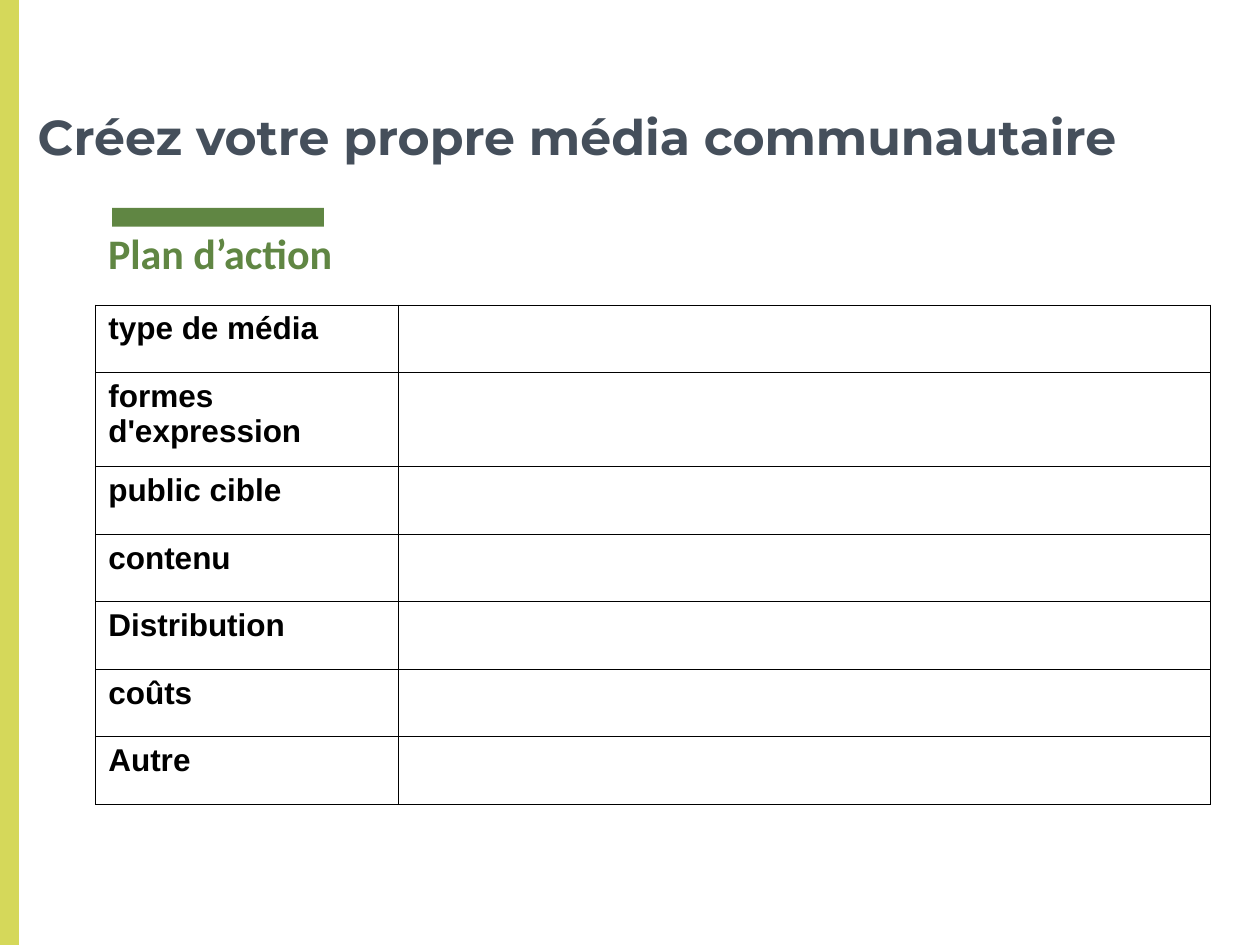
from dataclasses import dataclass

from lxml import etree
from pptx import Presentation
from pptx.dml.color import RGBColor
from pptx.enum.shapes import MSO_SHAPE
from pptx.enum.text import MSO_ANCHOR
from pptx.oxml.ns import qn
from pptx.util import Cm, Pt

RECT = MSO_SHAPE.RECTANGLE
TOP, BOTTOM = MSO_ANCHOR.TOP, MSO_ANCHOR.BOTTOM

COLORS = {
    "lime": "D5D85A",
    "green": "608643",
    "slate": "454F5B",
    "black": "000000",
}


@dataclass(frozen=True)
class Box:
    left: float
    top: float
    width: float
    height: float

    def lengths(self) -> tuple:
        return Cm(self.left), Cm(self.top), Cm(self.width), Cm(self.height)


@dataclass(frozen=True)
class Bar:
    box: Box
    color: str


@dataclass(frozen=True)
class PlanRow:
    label: str
    height: float = 1.36


BARS = [
    Bar(Box(2.26, 4.19, 4.27, 0.38), "green"),
    Bar(Box(0, 0, 0.38, 19.05), "lime"),
]
TITLE_BOX = Box(0.51, 0, 22.99, 3.58)
SUBTITLE_BOX = Box(1.93, 4.34, 21.56, 12.75)

PLAN_ROWS = [
    PlanRow("type de média"),
    PlanRow("formes d'expression", 1.9),
    PlanRow("public cible"),
    PlanRow("contenu"),
    PlanRow("Distribution"),
    PlanRow("coûts"),
    PlanRow("Autre"),
]
COLUMN_WIDTHS = [6.1, 16.38]
TABLE_BOX = Box(1.93, 6.15, sum(COLUMN_WIDTHS), sum(row.height for row in PLAN_ROWS))


def write(tf, text: str, *, size: float, font: str, color: str, bold: bool = True) -> None:
    r = tf.paragraphs[0].add_run()
    r.text = text
    r.font.size = Pt(size)
    r.font.name = font
    r.font.bold = bold
    r.font.color.rgb = RGBColor.from_string(COLORS[color])


def add_bar(s, bar: Bar) -> None:
    sp = s.shapes.add_shape(RECT, *bar.box.lengths())
    sp.shadow.inherit = False
    sp.fill.solid()
    sp.fill.fore_color.rgb = RGBColor.from_string(COLORS[bar.color])
    sp.line.fill.background()


def add_text(s, box: Box, text: str, *, anchor=TOP, **fmt) -> None:
    tf = s.shapes.add_textbox(*box.lengths()).text_frame
    tf.word_wrap = True
    tf.vertical_anchor = anchor
    tf.margin_left = tf.margin_right = tf.margin_top = tf.margin_bottom = Cm(0.25)
    write(tf, text, **fmt)


def set_borders(cell, color: str, width: float) -> None:
    """Draw all four edges; they must precede the fill in the cell's XML."""
    tc_pr = cell._tc.get_or_add_tcPr()
    for i, edge in enumerate(("a:lnL", "a:lnR", "a:lnT", "a:lnB")):
        ln = etree.Element(qn(edge), w=str(Pt(width)))
        fill = etree.SubElement(ln, qn("a:solidFill"))
        etree.SubElement(fill, qn("a:srgbClr"), val=COLORS[color])
        tc_pr.insert(i, ln)


def add_plan_table(s) -> None:
    shape = s.shapes.add_table(len(PLAN_ROWS), len(COLUMN_WIDTHS), *TABLE_BOX.lengths())
    table = shape.table
    table.first_row = table.horz_banding = False
    for column, width in zip(table.columns, COLUMN_WIDTHS):
        column.width = Cm(width)
    for i, row in enumerate(PLAN_ROWS):
        table.rows[i].height = Cm(row.height)
        write(table.cell(i, 0).text_frame, row.label, size=18, font="Arial", color="black")
    for cell in table.iter_cells():
        cell.fill.background()
        set_borders(cell, "black", 0.75)


def main() -> None:
    prs = Presentation()
    prs.slide_width, prs.slide_height = Cm(25.4), Cm(19.05)
    s = prs.slides.add_slide(prs.slide_layouts[6])
    for bar in BARS:
        add_bar(s, bar)
    add_text(s, TITLE_BOX, "Créez votre propre média communautaire",
             anchor=BOTTOM, size=28, font="Montserrat", color="slate")
    add_text(s, SUBTITLE_BOX, "Plan d’action", size=24, font="Calibri", color="green")
    add_plan_table(s)
    prs.save("out.pptx")


if __name__ == "__main__":
    main()
